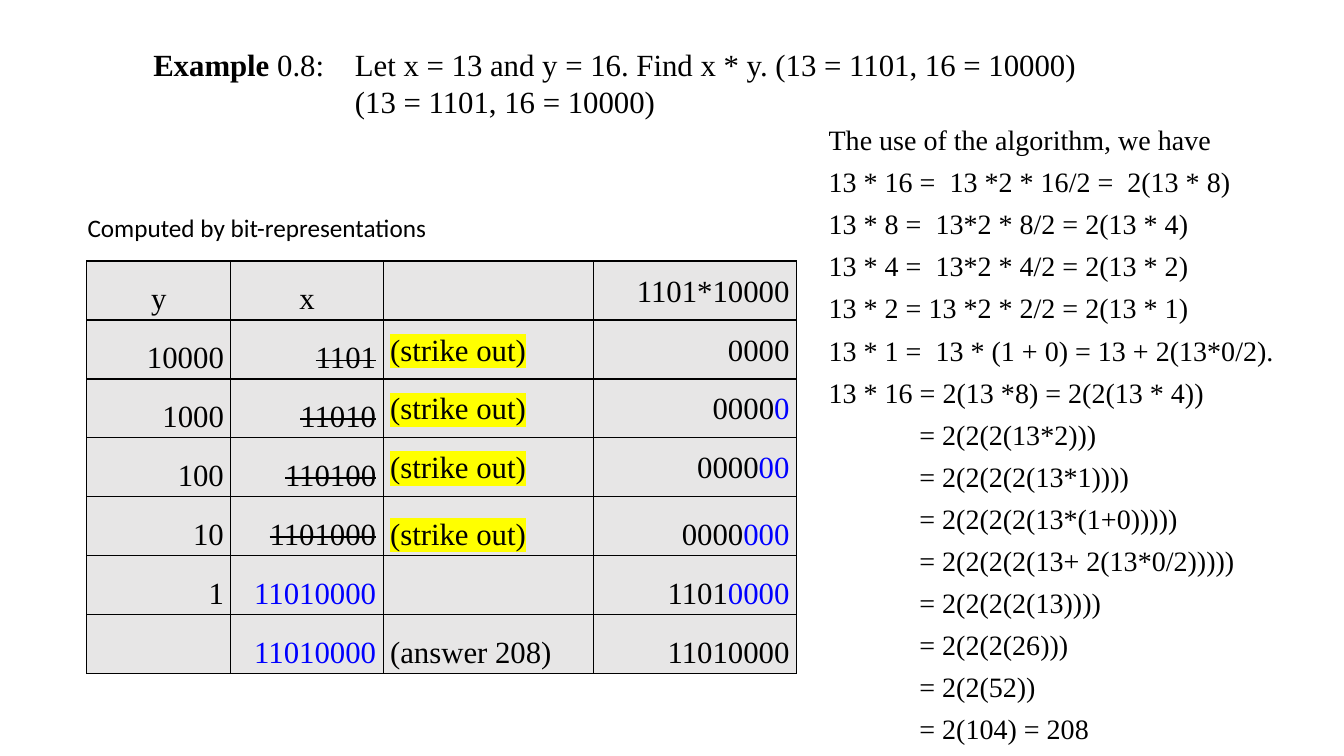
from dataclasses import dataclass

from lxml.etree import SubElement
from pptx import Presentation
from pptx.dml.color import RGBColor
from pptx.enum.text import MSO_ANCHOR as Anchor, MSO_AUTO_SIZE as AutoSize, PP_ALIGN as Align
from pptx.oxml import parse_xml
from pptx.oxml.ns import nsdecls, qn
from pptx.util import Inches, Pt

BLACK = RGBColor(0x00, 0x00, 0x00)
BLUE = RGBColor(0x00, 0x00, 0xFF)
GREY = RGBColor(0xE7, 0xE6, 0xE6)
YELLOW = RGBColor(0xFF, 0xFF, 0x00)

X, Y = 13, 16
COLUMN_WIDTHS = [1.43, 1.51, 2.09, 2.01]
ROW_HEIGHT = 0.585

ALGORITHM = [
    "The use of the algorithm, we have",
    "13 * 16 =  13 *2 * 16/2 =  2(13 * 8)",
    "13 * 8 =  13*2 * 8/2 = 2(13 * 4)",
    "13 * 4 =  13*2 * 4/2 = 2(13 * 2)",
    "13 * 2 = 13 *2 * 2/2 = 2(13 * 1)",
    "13 * 1 =  13 * (1 + 0) = 13 + 2(13*0/2).",
    "13 * 16 = 2(13 *8) = 2(2(13 * 4))",
    "= 2(2(2(13*2)))",
    "= 2(2(2(2(13*1))))",
    "= 2(2(2(2(13*(1+0)))))",
    "= 2(2(2(2(13+ 2(13*0/2)))))",
    "= 2(2(2(2(13))))",
    "= 2(2(2(26)))",
    "= 2(2(52))",
    "= 2(104) = 208",
]


@dataclass
class Span:
    text: str
    color: RGBColor = BLACK
    bold: bool = False
    strike: bool = False
    marked: bool = False


class SlideBuilder:
    serif = "Times New Roman"
    sans = "Calibri"

    def __init__(self, page):
        self.page = page

    def style(self, run, size, font, color=BLACK, bold=False):
        run.font.size = Pt(size)
        run.font.name = font
        run.font.color.rgb = color
        run.font.bold = bold

    def add_spans(self, para, spans, size):
        for span in spans:
            run = para.add_run()
            run.text = span.text
            self.style(run, size, self.serif, span.color, span.bold)
            properties = run._r.get_or_add_rPr()
            if span.strike:
                properties.set("strike", "sngStrike")
            if span.marked:
                properties.find(qn("a:solidFill")).addnext(parse_xml(
                    f'<a:highlight {nsdecls("a")}><a:srgbClr val="{YELLOW}"/></a:highlight>'))

    def indent(self, para, left, first=0):
        properties = para._p.get_or_add_pPr()
        properties.set("marL", str(Inches(left)))
        properties.set("indent", str(Inches(first)))

    def title(self, left, top, width, height, lines, size, hanging):
        box = self.page.shapes.title
        box.left, box.top, box.width, box.height = map(Inches, (left, top, width, height))
        frame = box.text_frame
        frame.word_wrap = True
        frame.auto_size = AutoSize.NONE
        frame.vertical_anchor = Anchor.TOP
        for index, spans in enumerate(lines):
            para = frame.add_paragraph() if index else frame.paragraphs[0]
            para.alignment = Align.LEFT
            self.indent(para, hanging, 0 if index else -hanging)
            self.add_spans(para, spans, size)

    def text(self, left, top, width, height, lines, size, font, after=0, step_indent=0):
        frame = self.page.shapes.add_textbox(
            *map(Inches, (left, top, width, height))).text_frame
        frame.word_wrap = True
        frame.text = "\n".join(lines)
        for para in frame.paragraphs:
            para.space_after = Pt(after)
            if para.text.startswith("="):
                self.indent(para, step_indent)
            for run in para.runs:
                self.style(run, size, font)

    def cell(self, cell, spans, align, spacing):
        cell.fill.solid()
        cell.fill.fore_color.rgb = GREY
        cell.vertical_anchor = Anchor.MIDDLE
        cell.margin_left = cell.margin_right = Inches(0.07)
        cell.margin_top = cell.margin_bottom = 0
        properties = cell._tc.get_or_add_tcPr()
        for position, side in enumerate(("lnL", "lnR", "lnT", "lnB")):
            line = SubElement(properties, qn(f"a:{side}"), w=str(Pt(1)))
            fill = SubElement(line, qn("a:solidFill"))
            SubElement(fill, qn("a:srgbClr"), val=str(BLACK))
            properties.insert(position, line)
        if spans:
            para = cell.text_frame.paragraphs[0]
            para.alignment = align
            para.line_spacing = spacing
            self.add_spans(para, spans, 22)

    def table(self, left, top, rows):
        table = self.page.shapes.add_table(
            len(rows), len(COLUMN_WIDTHS), Inches(left), Inches(top),
            Inches(sum(COLUMN_WIDTHS)), Inches(ROW_HEIGHT * len(rows))).table
        table.first_row = table.horz_banding = False
        for column, width in zip(table.columns, COLUMN_WIDTHS):
            column.width = Inches(width)
        for row_index, row in enumerate(rows):
            table.rows[row_index].height = Inches(ROW_HEIGHT)
            for column_index, spans in enumerate(row):
                if column_index == 2:
                    align = Align.LEFT
                else:
                    align = Align.CENTER if row_index == 0 and column_index < 2 else Align.RIGHT
                spacing = 1.07 if row_index < 4 and column_index >= 2 else 1.5
                self.cell(table.cell(row_index, column_index), spans, align, spacing)


def multiplication_rows():
    rows = [[[Span("y")], [Span("x")], [], [Span(f"{X:b}*{Y:b}")]]]
    for shift in range(Y.bit_length()):
        halved, doubled = Y >> shift, X << shift
        odd = halved % 2 == 1
        product = [Span(f"{X:b}" if odd else "0000")]
        if shift:
            product.append(Span("0" * shift, BLUE))
        rows.append([
            [Span(f"{halved:b}")],
            [Span(f"{doubled:b}", BLUE if odd else BLACK, strike=not odd)],
            [] if odd else [Span("(strike out)", marked=True)],
            product,
        ])
    answer = X * Y
    rows.append([[], [Span(f"{answer:b}", BLUE)], [Span(f"(answer {answer})")],
                 [Span(f"{answer:b}")]])
    return rows


def main():
    deck = Presentation()
    deck.slide_width, deck.slide_height = Inches(13.33), Inches(7.5)
    builder = SlideBuilder(deck.slides.add_slide(deck.slide_layouts[5]))
    builder.table(0.86, 2.59, multiplication_rows())
    builder.title(1.42, 0.4, 10.16, 1.21, [
        [Span("Example", bold=True),
         Span(" 0.8:\tLet x = 13 and y = 16. Find x * y. (13 = 1101, 16 = 10000)")],
        [Span("(13 = 1101, 16 = 10000)")],
    ], 22, hanging=2)
    builder.text(8.12, 1.17, 4.75, 6.33, ALGORITHM, 20, builder.serif,
                 after=6, step_indent=0.9)
    builder.text(0.77, 2.06, 3.84, 0.4, ["Computed by bit-representations"], 18, builder.sans)
    deck.save("out.pptx")


if __name__ == "__main__":
    main()
